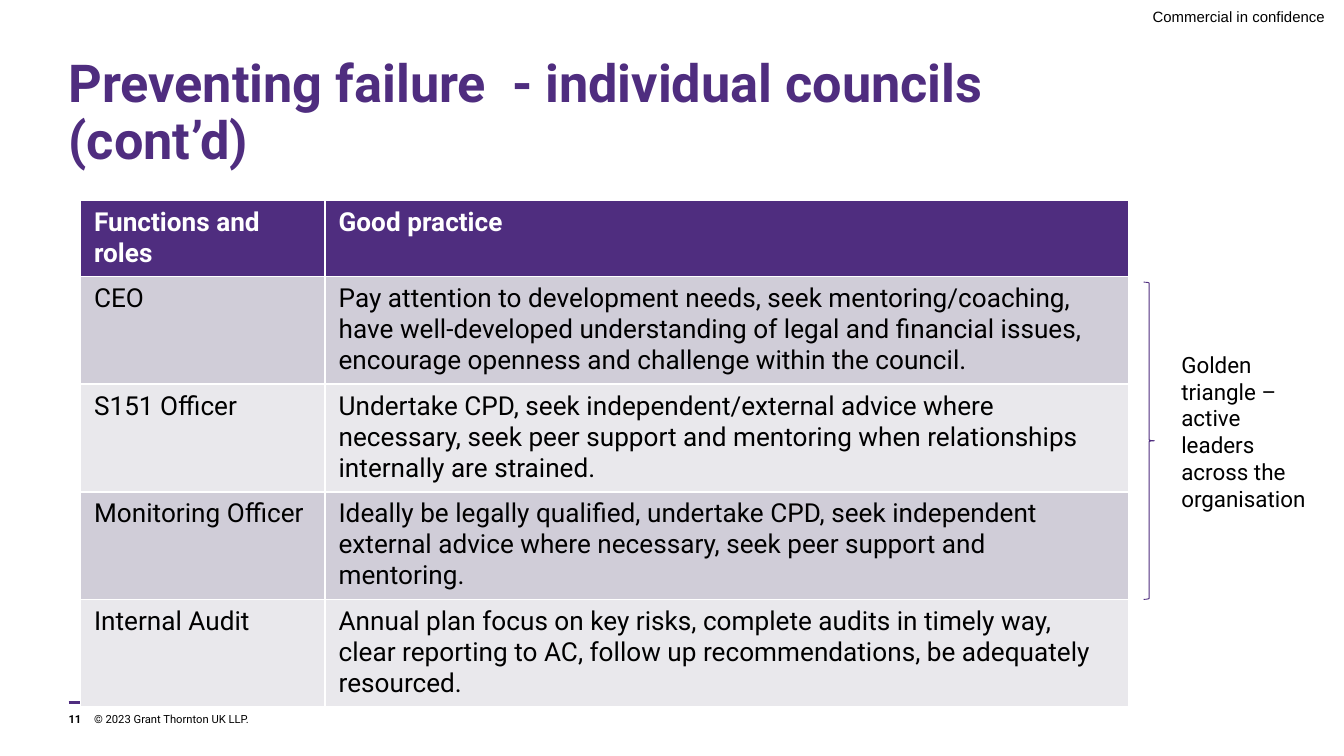
from lxml.etree import SubElement
from pptx import Presentation
from pptx.dml.color import RGBColor
from pptx.enum.shapes import MSO_CONNECTOR, MSO_SHAPE
from pptx.enum.text import MSO_ANCHOR, MSO_AUTO_SIZE, PP_ALIGN
from pptx.oxml.ns import qn
from pptx.util import Inches, Pt

PURPLE = RGBColor(0x4F, 0x2D, 0x7F)
BLACK = RGBColor(0, 0, 0)
WHITE = RGBColor(0xFF, 0xFF, 0xFF)
BAND_DARK = RGBColor(0xD0, 0xCD, 0xD8)
BAND_LIGHT = RGBColor(0xE9, 0xE8, 0xEC)


def write(frame, text, size, color=BLACK, bold=False, font="Roboto"):
    frame.word_wrap = True
    paragraph = frame.paragraphs[0]
    run = paragraph.add_run()
    run.text = text
    run.font.name = font
    run.font.size = Pt(size)
    run.font.bold = bold
    run.font.color.rgb = color
    return paragraph


def set_margins(frame, right=0):
    frame.margin_left = frame.margin_top = frame.margin_bottom = 0
    frame.margin_right = Inches(right)


# 16:9 slide
prs = Presentation()
prs.slide_width = Inches(10)
prs.slide_height = Inches(10 * 9 / 16)
slide = prs.slides.add_slide(prs.slide_layouts[5])
shapes = slide.shapes

# Footer rule
footer_rule = shapes.add_connector(
    MSO_CONNECTOR.STRAIGHT, Inches(0.51), Inches(5.23), Inches(3.35), Inches(5.23))
footer_rule.line.color.rgb = PURPLE
footer_rule.line.width = Pt(1.5)
SubElement(footer_rule._element.spPr, qn("a:effectLst"))

# Title
title = shapes.title
title.left, title.top = Inches(0.51), Inches(0.43)
title.width, title.height = Inches(7.89), Inches(0.87)
set_margins(title.text_frame)
title.text_frame.auto_size = MSO_AUTO_SIZE.NONE
title.text_frame.vertical_anchor = MSO_ANCHOR.TOP
heading = write(title.text_frame, "Preventing failure  - individual councils (cont’d)",
                28, PURPLE, bold=True)
heading.alignment = PP_ALIGN.LEFT
heading.line_spacing = 0.9

# Footer and side note
notes = [
    ("© 2023 Grant Thornton UK LLP.", 0.7, 5.3, 4.31, 0.1, 6, False),
    ("11", 0.51, 5.3, 0.18, 0.1, 6, True),
    ("Golden triangle – active leaders across the organisation",
     8.79, 2.61, 0.93, 1.21, 12, False),
]
for text, left, top, width, height, size, bold in notes:
    note = shapes.add_textbox(Inches(left), Inches(top), Inches(width), Inches(height))
    set_margins(note.text_frame)
    write(note.text_frame, text, size, bold=bold)

# Confidentiality marking
marking = shapes.add_textbox(Inches(8.44), 0, Inches(1.56), Inches(0.24))
set_margins(marking.text_frame, right=0.14)
marking.text_frame.vertical_anchor = MSO_ANCHOR.MIDDLE
write(marking.text_frame, "Commercial in confidence", 8,
      font="Arial").alignment = PP_ALIGN.RIGHT

# Table of roles and good practice; rows grow to fit their text
roles = [
    ("Functions and roles", "Good practice"),
    ("CEO", "Pay attention to development needs, seek mentoring/coaching, have "
     "well-developed understanding of legal and financial issues, encourage "
     "openness and challenge within the council."),
    ("S151 Officer", "Undertake CPD, seek independent/external advice where necessary, "
     "seek peer support and mentoring when relationships internally are strained."),
    ("Monitoring Officer", "Ideally be legally qualified, undertake CPD, seek independent "
     "external advice where necessary, seek peer support and mentoring."),
    ("Internal Audit", "Annual plan focus on key risks, complete audits in timely way, "
     "clear reporting to AC, follow up recommendations, be adequately resourced."),
]
roles_frame = shapes.add_table(len(roles), 2, Inches(0.6), Inches(1.49),
                               Inches(7.8), Inches(3.77))
table = roles_frame.table
table.columns[0].width = Inches(1.82)
table.columns[1].width = Inches(5.98)
for r, role in enumerate(roles):
    is_header = r == 0
    table.rows[r].height = Inches(0.41)
    for c, text in enumerate(role):
        cell = table.cell(r, c)
        cell.fill.solid()
        cell.fill.fore_color.rgb = (
            PURPLE if is_header else BAND_DARK if r % 2 else BAND_LIGHT)
        write(cell.text_frame, text, 14, WHITE if is_header else BLACK, bold=is_header)
roles_frame.height = Inches(3.77)

# Brace around the three officers of the golden triangle
brace = shapes.add_shape(MSO_SHAPE.RIGHT_BRACE, Inches(8.51), Inches(2.1),
                         Inches(0.08), Inches(2.36))
brace.shadow.inherit = False
brace.fill.background()
brace.line.color.rgb = PURPLE
brace.line.width = Pt(0.5)

prs.save("out.pptx")
